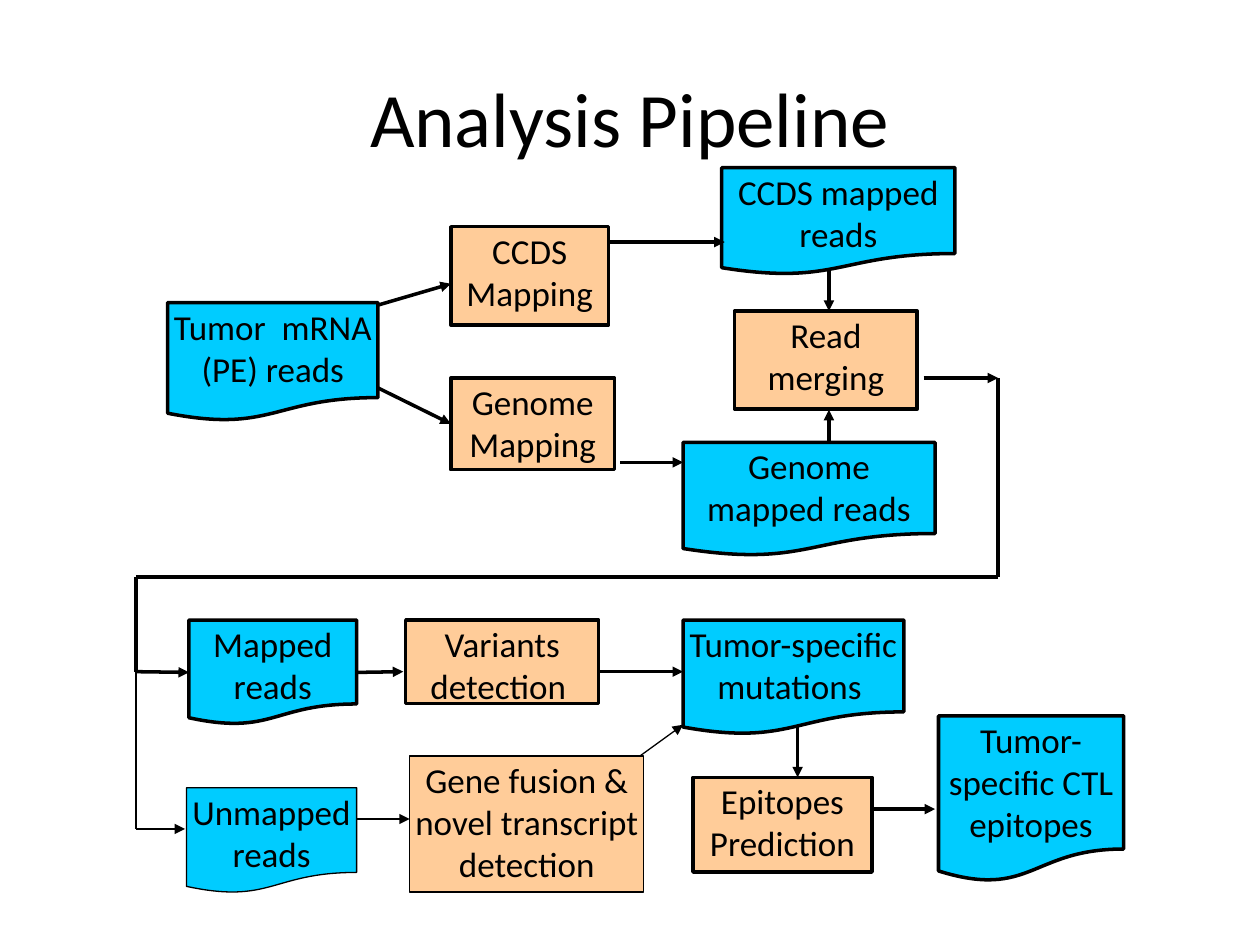
from dataclasses import dataclass
from typing import Optional

from lxml.etree import SubElement
from pptx import Presentation
from pptx.dml.color import RGBColor
from pptx.enum.shapes import MSO_CONNECTOR, MSO_SHAPE
from pptx.enum.text import MSO_ANCHOR, PP_ALIGN
from pptx.oxml.ns import qn
from pptx.util import Cm, Pt


@dataclass(frozen=True)
class Theme:
    font: str = "Calibri"
    title_size: float = 44
    body_size: float = 20
    ink: RGBColor = RGBColor(0x00, 0x00, 0x00)
    data: RGBColor = RGBColor(0x00, 0xCC, 0xFF)
    process: RGBColor = RGBColor(0xFF, 0xCC, 0x99)
    thick: float = 2
    thin: float = 0.75


THEME = Theme()
LEFT_SIDE, RIGHT_SIDE = 1, 3


@dataclass(frozen=True)
class Step:
    """A flowchart box; lengths in centimetres."""
    text: str
    left: float
    top: float
    width: float
    height: float
    is_data: bool = False
    weight: float = THEME.thick
    space_after: float = 10


@dataclass(frozen=True)
class Link:
    """A straight line; a named step is joined at the given side."""
    start: tuple[float, float]
    end: tuple[float, float]
    weight: float = THEME.thick
    arrow: bool = True
    begin_step: Optional[str] = None
    end_step: Optional[str] = None


STEPS = [
    Step("Tumor  mRNA (PE) reads", 3.38, 6.1, 4.24, 2.39, True),
    Step("CCDS\nMapping", 9.09, 4.57, 3.18, 1.98),
    Step("Genome Mapping", 9.09, 7.62, 3.3, 1.85),
    Step("Read merging", 14.81, 6.27, 3.68, 1.98),
    Step("CCDS mapped reads", 14.55, 3.38, 4.7, 2.16, True),
    Step("Genome mapped reads", 13.77, 8.92, 5.08, 2.29, True),
    Step("Tumor-specific mutations ", 13.77, 12.5, 4.45, 2.31, True),
    Step("Variants detection ", 8.18, 12.5, 3.89, 1.68),
    Step("Epitopes Prediction", 13.97, 15.67, 3.61, 1.91, space_after=0),
    Step("Tumor-specific CTL epitopes", 18.92, 14.43, 3.73, 3.35, True),
    Step("Mapped reads", 3.81, 12.5, 3.38, 2.11, True),
    Step("Gene fusion & novel transcript detection", 8.26, 15.24, 4.72, 2.74,
         weight=THEME.thin),
    Step("Unmapped reads", 3.76, 15.88, 3.43, 2.13, True, THEME.thin),
]

# Shared coordinates of the line that wraps from the upper row to the lower one
BUS_LEFT, BUS_RIGHT = 2.74, 20.12
MERGED_Y, BUS_Y, MAPPED_Y, UNMAPPED_Y = 7.62, 11.63, 13.54, 16.71
MERGE_X, EPITOPE_X = 16.71, 16.08

LINKS = [
    Link((7.62, 6.15), (9.09, 5.72)),
    Link((7.62, 7.82), (9.09, 8.46), end_step="Genome Mapping"),
    Link((12.27, 4.88), (14.61, 4.88)),
    Link((12.5, 9.32), (13.77, 9.32)),
    Link((MERGE_X, 8.92), (MERGE_X, 8.26)),
    Link((MERGE_X, 5.44), (MERGE_X, 6.27)),
    Link((17.58, 16.31), (18.85, 16.31)),
    Link((BUS_LEFT, MAPPED_Y), (3.81, MAPPED_Y), end_step="Mapped reads"),
    Link((BUS_LEFT, UNMAPPED_Y), (3.73, UNMAPPED_Y), THEME.thin),
    Link((7.19, 16.51), (8.26, 16.51), THEME.thin),
    Link((7.19, MAPPED_Y), (8.13, MAPPED_Y), begin_step="Mapped reads"),
    Link((12.9, 15.24), (13.77, 14.61), THEME.thin),
    Link((12.07, MAPPED_Y), (13.77, MAPPED_Y)),
    Link((EPITOPE_X, 14.61), (EPITOPE_X, 15.67)),
    Link((18.62, MERGED_Y), (BUS_RIGHT, MERGED_Y)),
    Link((BUS_RIGHT, MERGED_Y), (BUS_RIGHT, BUS_Y), arrow=False),
    Link((BUS_LEFT, BUS_Y), (BUS_RIGHT, BUS_Y), arrow=False),
    Link((BUS_LEFT, BUS_Y), (BUS_LEFT, MAPPED_Y), arrow=False),
    Link((BUS_LEFT, MAPPED_Y), (BUS_LEFT, UNMAPPED_Y), THEME.thin, False),
]


def write_text(text_frame, text: str, *, size: float, anchor: MSO_ANCHOR,
               space_after: float = 0) -> None:
    """Fill the frame, one paragraph per line, with space after the last."""
    text_frame.text = text
    text_frame.word_wrap = True
    text_frame.vertical_anchor = anchor
    for paragraph in text_frame.paragraphs:
        paragraph.alignment = PP_ALIGN.CENTER
        paragraph.font.name = THEME.font
        paragraph.font.size = Pt(size)
        paragraph.font.color.rgb = THEME.ink
    text_frame.paragraphs[-1].space_after = Pt(space_after)


def add_title(slide, text: str) -> None:
    title = slide.shapes.title
    title.left, title.top, title.width, title.height = map(
        Cm, (1.27, 0.76, 22.86, 3.18))
    write_text(title.text_frame, text, size=THEME.title_size,
               anchor=MSO_ANCHOR.MIDDLE)


def add_step(slide, step: Step):
    kind = (MSO_SHAPE.FLOWCHART_DOCUMENT if step.is_data
            else MSO_SHAPE.FLOWCHART_PROCESS)
    shape = slide.shapes.add_shape(
        kind, *map(Cm, (step.left, step.top, step.width, step.height)))
    shape.shadow.inherit = False
    shape.fill.solid()
    shape.fill.fore_color.rgb = THEME.data if step.is_data else THEME.process
    shape.line.color.rgb = THEME.ink
    shape.line.width = Pt(step.weight)
    frame = shape.text_frame
    frame.margin_left = frame.margin_right = Cm(0.1)
    frame.margin_top = frame.margin_bottom = Cm(0.05)
    write_text(frame, step.text, size=THEME.body_size, anchor=MSO_ANCHOR.TOP,
               space_after=step.space_after)
    return shape


def add_link(slide, link: Link, shapes: dict) -> None:
    connector = slide.shapes.add_connector(
        MSO_CONNECTOR.STRAIGHT, *map(Cm, (*link.start, *link.end)))
    if link.begin_step:
        connector.begin_connect(shapes[link.begin_step], RIGHT_SIDE)
    if link.end_step:
        connector.end_connect(shapes[link.end_step], LEFT_SIDE)
    connector.line.color.rgb = THEME.ink
    connector.line.width = Pt(link.weight)
    properties = connector._element.spPr
    if link.arrow:
        SubElement(properties.find(qn("a:ln")), qn("a:tailEnd"),
                   type="triangle")
    SubElement(properties, qn("a:effectLst"))


def main() -> None:
    presentation = Presentation()
    presentation.slide_width, presentation.slide_height = Cm(25.4), Cm(19.05)
    slide = presentation.slides.add_slide(presentation.slide_layouts[5])
    add_title(slide, "Analysis Pipeline")
    shapes = {step.text: add_step(slide, step) for step in STEPS}
    for link in LINKS:
        add_link(slide, link, shapes)
    presentation.save("out.pptx")


if __name__ == "__main__":
    main()
